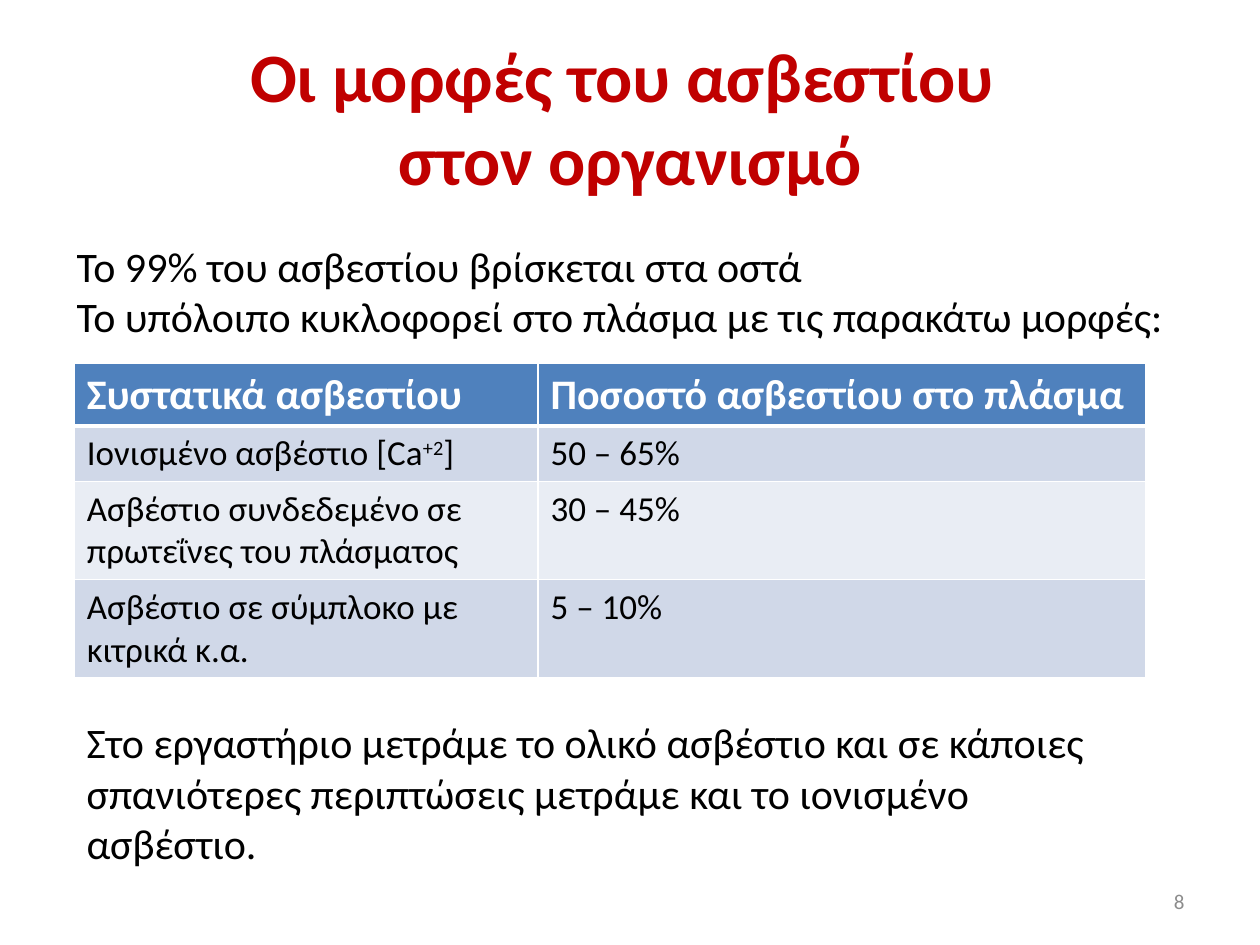
from lxml import etree
from pptx import Presentation, util as u
from pptx.dml.color import RGBColor
from pptx.enum import text
from pptx.oxml.ns import qn

# Content
TITLE = ["Οι μορφές του ασβεστίου ", "στον οργανισμό"]
INTRO = ["Το 99% του ασβεστίου βρίσκεται στα οστά",
         "Το υπόλοιπο κυκλοφορεί στο πλάσμα με τις παρακάτω μορφές:"]
# Each cell is a list of runs; a run starting with "+" is superscript
ROWS = [
    [["Συστατικά ασβεστίου"], ["Ποσοστό ασβεστίου στο πλάσμα"]],
    [["Ιονισμένο ασβέστιο [Ca", "+2", "]"], ["50 – 65%"]],
    [["Ασβέστιο συνδεδεμένο σε πρωτεΐνες του πλάσματος"], ["30 – 45%"]],
    [["Ασβέστιο σε σύμπλοκο με κιτρικά κ.α."], ["5 – 10%"]],
]
NOTE = ["Στο εργαστήριο μετράμε το ολικό ασβέστιο και σε κάποιες "
        "σπανιότερες περιπτώσεις μετράμε και το ιονισμένο ασβέστιο."]
PAGE = ["8"]

COL_WIDTHS = [3.68, 4.82]
ROW_HEIGHTS = [0.5, 0.44, 0.78, 0.78]

THEME = dict(
    font="Calibri", title="C00000", ink="000000", page="8C8C8C", white="FFFFFF",
    header="4F81BD", bands=["D0D8E8", "E9EDF4"],
    title_size=39.6, body_size=24, cell_size=20, page_size=12,
)


def add_run(p, words, size, color, bold=False):
    r = p.add_run()
    r.text = words
    f = r.font
    f.name, f.size, f.bold = THEME["font"], u.Pt(size), bold
    f.color.rgb = RGBColor.from_string(color)
    return r


def add_text(s, box, paras, size, color, align=text.PP_ALIGN.LEFT,
             anchor=text.MSO_ANCHOR.TOP):
    tf = s.shapes.add_textbox(*map(u.Inches, box)).text_frame
    tf.word_wrap, tf.vertical_anchor = True, anchor
    for i, words in enumerate(paras):
        p = tf.paragraphs[0] if i == 0 else tf.add_paragraph()
        p.alignment = align
        add_run(p, words, size, color)
    return tf


def add_borders(cell, bottom):
    tcPr = cell._tc.get_or_add_tcPr()
    for side, width in zip("LRTB", (1, 1, 1, bottom)):
        ln = etree.SubElement(tcPr, qn(f"a:ln{side}"), w=str(u.Pt(width)))
        fill = etree.SubElement(ln, qn("a:solidFill"))
        etree.SubElement(fill, qn("a:srgbClr"), val=THEME["white"])


def add_forms_table(s, left, top):
    tbl = s.shapes.add_table(
        len(ROWS), len(COL_WIDTHS), u.Inches(left), u.Inches(top),
        u.Inches(sum(COL_WIDTHS)), u.Inches(sum(ROW_HEIGHTS))).table
    for col, width in zip(tbl.columns, COL_WIDTHS):
        col.width = u.Inches(width)
    for i, (row, height) in enumerate(zip(ROWS, ROW_HEIGHTS)):
        tbl.rows[i].height = u.Inches(height)
        head = i == 0
        fill = THEME["header"] if head else THEME["bands"][(i - 1) % 2]
        size = THEME["body_size" if head else "cell_size"]
        color = THEME["white" if head else "ink"]
        for j, runs in enumerate(row):
            cell = tbl.cell(i, j)
            add_borders(cell, 3 if head else 1)
            cell.fill.solid()
            cell.fill.fore_color.rgb = RGBColor.from_string(fill)
            for words in runs:
                r = add_run(cell.text_frame.paragraphs[0], words, size, color, head)
                if words.startswith("+"):
                    r._r.get_or_add_rPr().set("baseline", "30000")


prs = Presentation()
prs.slide_width, prs.slide_height = u.Inches(10), u.Inches(7.5)
s = prs.slides.add_slide(prs.slide_layouts[6])

# Title: one paragraph with a line break
tf = add_text(s, (0.5, 0.3, 9, 1.25), [], THEME["title_size"], THEME["title"],
              anchor=text.MSO_ANCHOR.MIDDLE)
p = tf.paragraphs[0]
p.alignment = text.PP_ALIGN.CENTER
for i, line in enumerate(TITLE):
    if i:
        p.add_line_break()
    add_run(p, line, THEME["title_size"], THEME["title"], True)

# Table and the text around it
add_forms_table(s, 0.59, 2.88)
add_text(s, (0.51, 1.86, 8.9, 0.91), INTRO, THEME["body_size"], THEME["ink"])
add_text(s, (0.59, 5.64, 8.43, 1.31), NOTE, THEME["body_size"], THEME["ink"])

# Page number
add_text(s, (7.17, 6.95, 2.33, 0.4), PAGE, THEME["page_size"], THEME["page"],
         text.PP_ALIGN.RIGHT, text.MSO_ANCHOR.MIDDLE)

prs.save("out.pptx")
